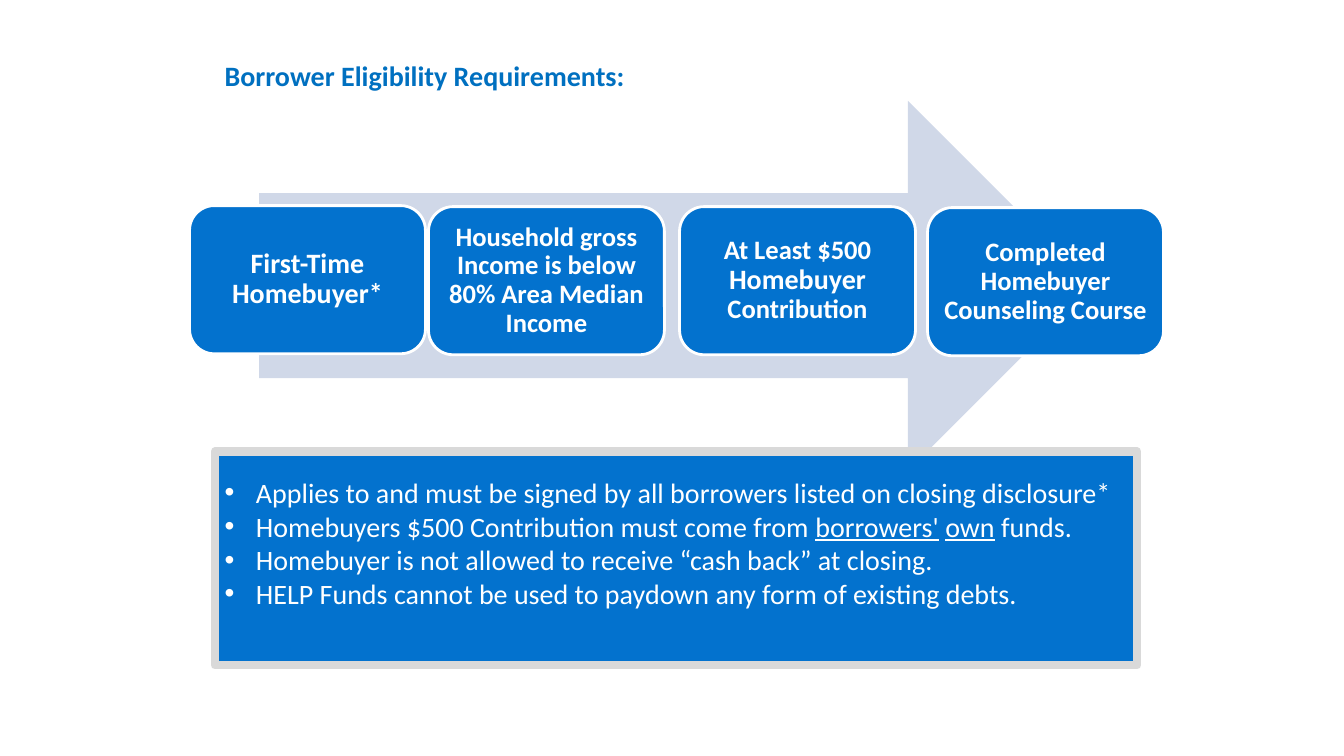
from dataclasses import dataclass
from typing import NamedTuple

from lxml.etree import SubElement
from pptx import Presentation
from pptx.dml.color import RGBColor
from pptx.enum.shapes import MSO_SHAPE
from pptx.enum.text import MSO_ANCHOR, PP_ALIGN
from pptx.oxml.ns import qn
from pptx.util import Emu, Pt

EMU_PER_PX = 9144  # 100 px to the inch


@dataclass(frozen=True)
class Theme:
    font: str = "Calibri"
    title: RGBColor = RGBColor(0x00, 0x70, 0xC0)
    blue: RGBColor = RGBColor(0x03, 0x72, 0xCE)
    arrow: RGBColor = RGBColor(0xD0, 0xD8, 0xE8)
    border: RGBColor = RGBColor(0xD9, 0xD9, 0xD9)
    white: RGBColor = RGBColor(0xFF, 0xFF, 0xFF)
    body_size: int = 20
    card_size: int = 19


THEME = Theme()


class Box(NamedTuple):
    left: int
    top: int
    width: int
    height: int


class Span(NamedTuple):
    text: str
    size: int = THEME.body_size
    underline: bool = False


class Card(NamedTuple):
    left: int
    top: int
    spans: list[Span]


CARD_WIDTH, CARD_HEIGHT, CARD_INSET = 234, 147, 8
CARDS = [
    Card(425, 205, [Span("Household gross Income is below 80% Area Median Income", THEME.card_size)]),
    Card(188, 204, [Span("First-Time Homebuyer*")]),
    Card(674, 205, [
        Span("At Least $500 ", THEME.card_size),
        Span("Homebuyer"),
        Span(" Contribution", THEME.card_size),
    ]),
    Card(920, 206, [Span("Completed Homebuyer Counseling Course", THEME.card_size)]),
]
RULES = [
    [Span("Applies to and must be signed by all borrowers listed on closing disclosure*")],
    [
        Span("Homebuyers $500 Contribution must come from "),
        Span("borrowers'", underline=True),
        Span(" "),
        Span("own", underline=True),
        Span(" funds."),
    ],
    [Span("Homebuyer is not allowed to receive “cash back” at closing.")],
    [Span("HELP Funds cannot be used to paydown any form of existing debts.")],
]
BULLET_INDENT = 31


def px(length: int) -> Emu:
    return Emu(length * EMU_PER_PX)


def add_block(slide, kind: MSO_SHAPE, box: Box, fill: RGBColor,
              line: RGBColor | None = None, line_width: int = 0):
    """Add a flat filled shape, outlined only when a line colour is given."""
    shape = slide.shapes.add_shape(kind, *map(px, box))
    shape.shadow.inherit = False
    shape.fill.solid()
    shape.fill.fore_color.rgb = fill
    if line is None:
        shape.line.fill.background()
    else:
        shape.line.color.rgb = line
        shape.line.width = Pt(line_width)
    return shape


def add_bullet(paragraph) -> None:
    properties = paragraph._p.get_or_add_pPr()
    properties.set("marL", str(px(BULLET_INDENT)))
    properties.set("indent", str(-px(BULLET_INDENT)))
    SubElement(properties, qn("a:buFont"), typeface="Arial")
    SubElement(properties, qn("a:buChar"), char="•")


def write_text(shape, paragraphs: list[list[Span]], color: RGBColor, bold: bool = False,
               bullets: bool = False, frame_format: dict | None = None,
               paragraph_format: dict | None = None) -> None:
    frame = shape.text_frame
    settings = {"word_wrap": True, "vertical_anchor": MSO_ANCHOR.MIDDLE} | (frame_format or {})
    for name, value in settings.items():
        setattr(frame, name, value)
    for index, spans in enumerate(paragraphs):
        paragraph = frame.add_paragraph() if index else frame.paragraphs[0]
        if bullets:
            add_bullet(paragraph)
        for name, value in ({"alignment": PP_ALIGN.LEFT} | (paragraph_format or {})).items():
            setattr(paragraph, name, value)
        for span in spans:
            run = paragraph.add_run()
            run.text = span.text
            run.font.color.rgb = color
            font_format = {"name": THEME.font, "size": Pt(span.size), "bold": bold,
                           "underline": span.underline}
            for name, value in font_format.items():
                setattr(run.font, name, value)


def draw_title(slide) -> None:
    title = slide.shapes.add_textbox(*map(px, Box(213, 50, 817, 50)))
    write_text(title, [[Span("Borrower Eligibility Requirements:")]], THEME.title, bold=True)


def draw_card(slide, card: Card) -> None:
    box = Box(card.left, card.top, CARD_WIDTH, CARD_HEIGHT)
    shape = add_block(slide, MSO_SHAPE.ROUNDED_RECTANGLE, box, THEME.blue, THEME.white, 2)
    insets = {f"margin_{side}": px(CARD_INSET) for side in ("left", "top", "right", "bottom")}
    write_text(shape, [card.spans], THEME.white, bold=True, frame_format=insets,
               paragraph_format={"alignment": PP_ALIGN.CENTER, "line_spacing": 0.9})


def draw_rules(slide) -> None:
    panel = add_block(slide, MSO_SHAPE.RECTANGLE, Box(213, 448, 915, 212),
                      THEME.blue, THEME.border, 6)
    write_text(panel, RULES, THEME.white, bullets=True, frame_format={"margin_bottom": px(36)})


def main() -> None:
    presentation = Presentation()
    presentation.slide_width, presentation.slide_height = px(1333), px(750)
    slide = presentation.slides.add_slide(presentation.slide_layouts[6])
    draw_title(slide)
    add_block(slide, MSO_SHAPE.RIGHT_ARROW, Box(257, 100, 827, 367), THEME.arrow)
    for card in CARDS:
        draw_card(slide, card)
    draw_rules(slide)
    presentation.save("out.pptx")


if __name__ == "__main__":
    main()
